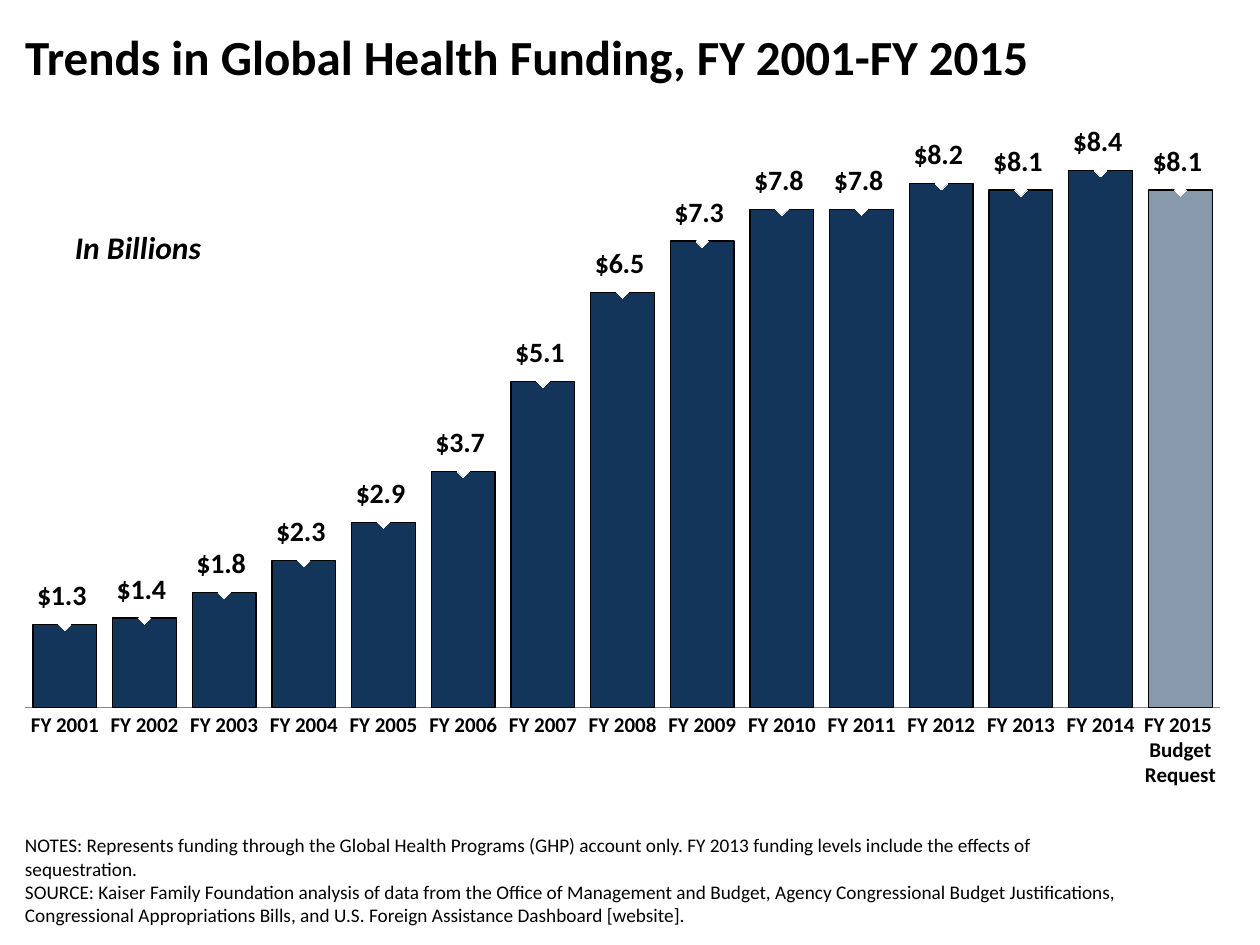
"""Build a slide with a column chart of global health funding by fiscal year."""
from lxml import etree
from pptx import Presentation
from pptx.chart.data import CategoryChartData
from pptx.dml.color import RGBColor
from pptx.enum.chart import XL_CHART_TYPE, XL_LABEL_POSITION, XL_MARKER_STYLE, XL_TICK_MARK
from pptx.enum.text import MSO_ANCHOR, MSO_AUTO_SIZE, PP_ALIGN
from pptx.oxml import parse_xml
from pptx.oxml.ns import nsdecls, qn
from pptx.util import Pt

STACKED = XL_CHART_TYPE.COLUMN_STACKED
ABOVE = XL_LABEL_POSITION.ABOVE
DIAMOND = XL_MARKER_STYLE.DIAMOND
NO_TICK = XL_TICK_MARK.NONE
TOP, BOTTOM = MSO_ANCHOR.TOP, MSO_ANCHOR.BOTTOM
LEFT, CENTER = PP_ALIGN.LEFT, PP_ALIGN.CENTER
NO_AUTO_SIZE = MSO_AUTO_SIZE.NONE
NAVY, BLACK, WHITE, GRAY = "133559", "000000", "FFFFFF", "868686"
FONT = "Calibri"
DOLLARS = '"$"#,##0.0_);[Red]\\("$"#,##0.0\\)'
FUNDING = [1.3, 1.4, 1.8, 2.3, 2.9, 3.7, 5.1, 6.5, 7.3, 7.8, 7.8, 8.2, 8.1, 8.4, 8.1]
NOTES = (
    "NOTES: Represents funding through the Global Health Programs (GHP) account only. "
    "FY 2013 funding levels include the effects of sequestration.\v"
    "SOURCE: Kaiser Family Foundation analysis of data from the Office of Management and Budget, "
    "Agency Congressional Budget Justifications, Congressional Appropriations Bills, "
    "and U.S. Foreign Assistance Dashboard [website]."
)


def color(value):
    """Return the colour for a hex string."""
    return RGBColor.from_string(value)


def format_font(font, **values):
    """Set the typeface, black colour and given attributes of a font."""
    font.color.rgb = color(BLACK)
    for name, value in {"name": FONT, **values}.items():
        setattr(font, name, value)


presentation = Presentation()
presentation.slide_width, presentation.slide_height = Pt(720), Pt(540)
slide = presentation.slides.add_slide(presentation.slide_layouts[5])

chart_data = CategoryChartData(number_format=DOLLARS)
chart_data.categories = [f"FY {year}" for year in range(2001, 2015)] + ["FY 2015 \nBudget Request"]
for series_name in ("Series 1", "Series 2"):
    chart_data.add_series(series_name, FUNDING)
chart = slide.shapes.add_chart(STACKED, Pt(3), Pt(54), Pt(705.6), Pt(396), chart_data).chart
chart.has_legend = chart.has_title = False
format_font(chart.font, size=Pt(18))

value_axis = chart.value_axis
for name, value in {"visible": False, "has_major_gridlines": False,
                    "minimum_scale": 0, "maximum_scale": 9}.items():
    setattr(value_axis, name, value)
category_axis = chart.category_axis
category_axis.major_tick_mark = category_axis.minor_tick_mark = NO_TICK
category_axis.format.line.color.rgb = color(GRAY)
format_font(category_axis.tick_labels.font, size=Pt(12), bold=True)

columns = chart.plots[0]
columns.gap_width, columns.overlap, columns.vary_by_categories = 25, 100, False
bar_series = columns.series[0]
budget_request = bar_series.points[len(FUNDING) - 1]
for bar_format in (bar_series.format, budget_request.format):
    bar_format.fill.solid()
    bar_format.fill.fore_color.rgb = color(NAVY)
    bar_format.line.color.rgb = color(BLACK)
    bar_format.line.width = Pt(0.75)
request_color = budget_request._element.find(f".//{qn('c:dPt')}//{qn('a:solidFill')}/{qn('a:srgbClr')}")
etree.SubElement(request_color, qn("a:alpha"), val="50000")

bar_element = columns._element
line_element = parse_xml(
    f'<c:lineChart {nsdecls("c")}><c:grouping val="standard"/><c:varyColors val="0"/>'
    '<c:marker val="1"/></c:lineChart>'
)
label_element = bar_element.findall(qn("c:ser"))[1]
for invert in label_element.findall(qn("c:invertIfNegative")):
    label_element.remove(invert)
line_element.insert(2, label_element)
for axis_id in bar_element.findall(qn("c:axId")):
    etree.SubElement(line_element, qn("c:axId"), val=axis_id.get("val"))
bar_element.addnext(line_element)

label_series = chart.plots[1].series[0]
label_series.smooth = False
label_series.format.line.fill.background()
marker = label_series.marker
marker.style, marker.size = DIAMOND, 7
marker.format.fill.solid()
marker.format.fill.fore_color.rgb = color(WHITE)
marker.format.line.fill.background()
labels = label_series.data_labels
for name, value in {"show_value": True, "position": ABOVE, "number_format": DOLLARS,
                    "number_format_is_linked": False}.items():
    setattr(labels, name, value)
format_font(labels.font, size=Pt(16), bold=True)

plot_area = chart._chartSpace.chart.plotArea
for old_layout in plot_area.findall(qn("c:layout")):
    plot_area.remove(old_layout)
plot_area.insert(0, parse_xml(
    f'<c:layout {nsdecls("c")}><c:manualLayout><c:layoutTarget val="inner"/>'
    '<c:xMode val="edge"/><c:yMode val="edge"/><c:x val="0.016"/><c:y val="0.055"/>'
    '<c:w val="0.968"/><c:h val="0.83"/></c:manualLayout></c:layout>'
))

title = slide.shapes.title
unit_label, notes = (slide.shapes.add_textbox(0, 0, 0, 0) for _ in range(2))
texts = [
    (title, "Trends in Global Health Funding, FY 2001-FY 2015", (7.2, 11.5, 705.6, 72),
     TOP, LEFT, True, {"size": Pt(28), "bold": True}),
    (unit_label, "In Billions", (35.3, 126.7, 87.1, 28.8),
     TOP, CENTER, False, {"size": Pt(18), "bold": True, "italic": True}),
    (notes, NOTES, (7.2, 489.6, 655.2, 43.2), BOTTOM, LEFT, True, {"size": Pt(11)}),
]
for shape, text, box, anchor, alignment, wrap, font_values in texts:
    shape.left, shape.top, shape.width, shape.height = map(Pt, box)
    frame = shape.text_frame
    for name, value in {"auto_size": NO_AUTO_SIZE, "word_wrap": wrap, "vertical_anchor": anchor}.items():
        setattr(frame, name, value)
    paragraph = frame.paragraphs[0]
    paragraph.text = text
    paragraph.alignment = alignment
    for run in paragraph.runs:
        format_font(run.font, **font_values)

presentation.save("out.pptx")
